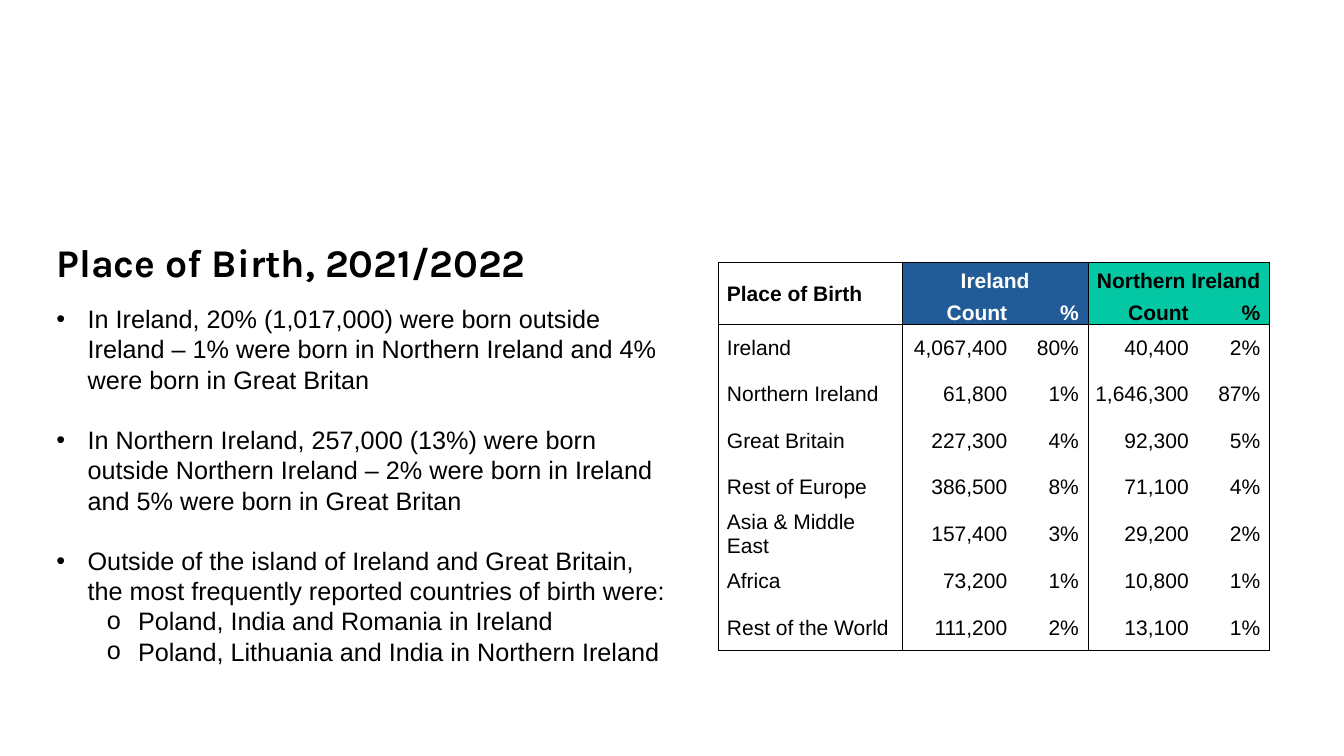
from lxml.etree import SubElement
from pptx import Presentation
from pptx.dml.color import RGBColor
from pptx.enum.text import MSO_ANCHOR, MSO_AUTO_SIZE, PP_ALIGN
from pptx.oxml.ns import qn
from pptx.util import Inches, Pt

BLACK = RGBColor(0x00, 0x00, 0x00)
WHITE = RGBColor(0xFF, 0xFF, 0xFF)
BLUE = RGBColor(0x21, 0x5C, 0x98)
GREEN = RGBColor(0x04, 0xC8, 0xA3)

POINTS = [
    (0, "In Ireland, 20% (1,017,000) were born outside Ireland – 1% were born "
        "in Northern Ireland and 4% were born in Great Britan"),
    (0, "In Northern Ireland, 257,000 (13%) were born outside Northern Ireland "
        "– 2% were born in Ireland and 5% were born in Great Britan"),
    (0, "Outside of the island of Ireland and Great Britain, the most "
        "frequently reported countries of birth were:"),
    (1, "Poland, India and Romania in Ireland"),
    (1, "Poland, Lithuania and India in Northern Ireland"),
]

ROWS = [
    ("Place of Birth", "Ireland", "", "Northern Ireland", ""),
    ("", "Count", "%", "Count", "%"),
    ("Ireland", "4,067,400", "80%", "40,400", "2%"),
    ("Northern Ireland", "61,800", "1%", "1,646,300", "87%"),
    ("Great Britain", "227,300", "4%", "92,300", "5%"),
    ("Rest of Europe", "386,500", "8%", "71,100", "4%"),
    ("Asia & Middle East", "157,400", "3%", "29,200", "2%"),
    ("Africa", "73,200", "1%", "10,800", "1%"),
    ("Rest of the World", "111,200", "2%", "13,100", "1%"),
]
WIDTHS = [1.83, 1.13, 0.71, 1.09, 0.71]
HEIGHTS = [0.31] * 2 + [0.46] * 7
MERGES = [(0, 0, 1, 0), (0, 1, 0, 2), (0, 3, 0, 4)]
COL_EDGES = {0, 1, 3, 5}
ROW_EDGES = {0, 2, 9}


class Page:
    font = "Arial"
    pitch = Pt(21.6)

    def __init__(self, deck):
        self.slide = deck.slides.add_slide(deck.slide_layouts[1])

    def place(self, shape, left, top, width, height):
        shape.left, shape.top = Inches(left), Inches(top)
        shape.width, shape.height = Inches(width), Inches(height)
        frame = shape.text_frame
        frame.word_wrap = True
        frame.auto_size = MSO_AUTO_SIZE.NONE
        frame.vertical_anchor = MSO_ANCHOR.TOP
        return frame

    def add_text(self, para, text, size, color=BLACK, bold=False, font=None):
        run = para.add_run()
        run.text = text
        run.font.name = font or self.font
        run.font.size = Pt(size)
        run.font.bold = bold
        run.font.color.rgb = color

    def title(self, text, *box):
        frame = self.place(self.slide.shapes.title, *box)
        para = frame.paragraphs[0]
        para.alignment = PP_ALIGN.LEFT
        self.add_text(para, text, 28, bold=True, font="Karla")

    def bullet(self, para, level):
        props = para._p.get_or_add_pPr()
        props.set("marL", str(Inches(0.31 + 0.5 * level)))
        props.set("indent", str(Inches(-0.31)))
        SubElement(props, qn("a:buFont")).set("typeface", self.font)
        SubElement(props, qn("a:buChar")).set("char", "•o"[level])

    def points(self, items, *box):
        frame = self.place(self.slide.placeholders[1], *box)
        for i, (level, text) in enumerate(items):
            para = frame.add_paragraph() if i else frame.paragraphs[0]
            self.bullet(para, level)
            para.level = level
            para.alignment = PP_ALIGN.LEFT
            para.line_spacing = self.pitch
            para.space_before = self.pitch if i and level == 0 else Pt(0)
            para.space_after = Pt(0)
            self.add_text(para, text, 18)

    def border(self, cell, row, col):
        high = cell.span_height if cell.is_merge_origin else 1
        wide = cell.span_width if cell.is_merge_origin else 1
        sides = {
            "L": col in COL_EDGES,
            "R": col + wide in COL_EDGES,
            "T": row in ROW_EDGES,
            "B": row + high in ROW_EDGES,
        }
        props = cell._tc.get_or_add_tcPr()
        for side, shown in sides.items():
            line = SubElement(props, qn("a:ln" + side))
            line.set("w", str(Pt(0.5) if shown else 0))
            if shown:
                fill = SubElement(line, qn("a:solidFill"))
                SubElement(fill, qn("a:srgbClr")).set("val", str(BLACK))
            else:
                SubElement(line, qn("a:noFill"))

    def cell(self, cell, row, col, text):
        head = row < 2
        label = col == 0
        group = row == 0 and not label
        self.border(cell, row, col)
        if head and not label:
            cell.fill.solid()
            cell.fill.fore_color.rgb = BLUE if col < 3 else GREEN
        else:
            cell.fill.background()
        cell.margin_left = Inches(0.09 if label else 0.01)
        cell.margin_right = Inches(0.01 if label or group else 0.09)
        cell.margin_top, cell.margin_bottom = Inches(0.01), 0
        low = head and not label
        cell.vertical_anchor = MSO_ANCHOR.BOTTOM if low else MSO_ANCHOR.MIDDLE
        if text:
            para = cell.text_frame.paragraphs[0]
            para.alignment = (PP_ALIGN.LEFT if label else
                              PP_ALIGN.CENTER if group else PP_ALIGN.RIGHT)
            color = WHITE if head and col in (1, 2) else BLACK
            self.add_text(para, text, 15, color, head)

    def table(self, rows, left, top):
        frame = self.slide.shapes.add_table(
            len(rows), len(WIDTHS), Inches(left), Inches(top),
            Inches(sum(WIDTHS)), Inches(sum(HEIGHTS)))
        grid = frame.table
        grid.first_row = grid.horz_banding = False
        for col, width in zip(grid.columns, WIDTHS):
            col.width = Inches(width)
        for row, height in zip(grid.rows, HEIGHTS):
            row.height = Inches(height)
        for r1, c1, r2, c2 in MERGES:
            grid.cell(r1, c1).merge(grid.cell(r2, c2))
        for r, row in enumerate(rows):
            for c, text in enumerate(row):
                self.cell(grid.cell(r, c), r, c, text)


def main():
    deck = Presentation()
    deck.slide_width, deck.slide_height = Inches(13.33), Inches(7.5)
    page = Page(deck)
    page.title("Place of Birth, 2021/2022", 0.46, 2.31, 5.16, 0.57)
    page.points(POINTS, 0.46, 2.96, 6.3, 4.04)
    page.table(ROWS, 7.12, 2.6)
    deck.save("out.pptx")


if __name__ == "__main__":
    main()
